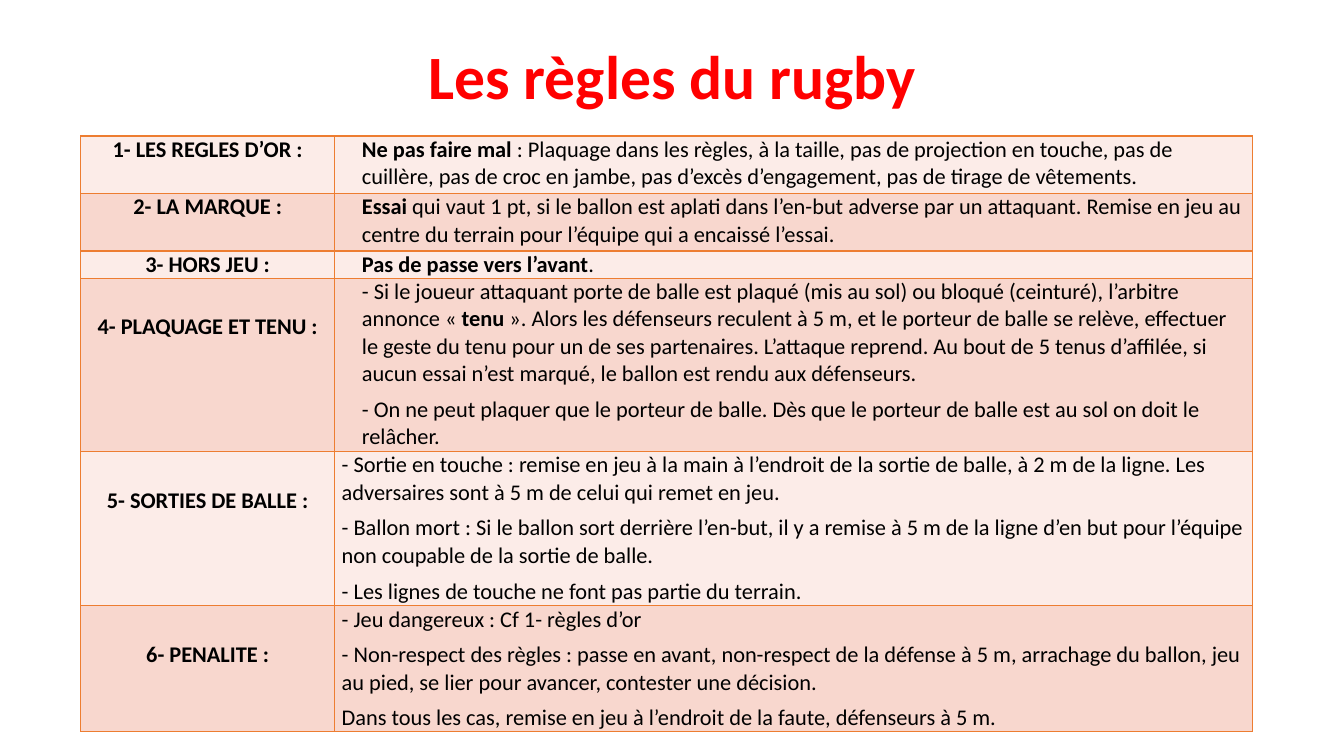
from dataclasses import dataclass

from lxml import etree
from pptx import Presentation
from pptx import util as u
from pptx.dml.color import RGBColor
from pptx.enum import text
from pptx.oxml import ns


@dataclass(frozen=True)
class Theme:
    font: str = "Calibri"
    title_size: int = 44
    body_size: int = 16
    paragraph_gap: int = 6
    border_width: int = 1
    title: str = "FF0000"
    ink: str = "000000"
    border: str = "ED7D31"
    bands: tuple[str, str] = ("FCECE8", "F8D7CE")


@dataclass(frozen=True)
class Span:
    content: str
    bold: bool = False


@dataclass(frozen=True)
class Rule:
    label: str
    height: float
    paragraphs: list[list[Span]]
    label_top: float = 0
    indent: float = 0


THEME = Theme()
COLUMN_WIDTHS = (2.52, 9.1)
SIDE_MARGIN = 0.07
INDENT = 0.2
LABEL_DROP = 0.35

RULES = [
    Rule("1- LES REGLES D’OR :", 0.57, [[
        Span("Ne pas faire mal", True),
        Span(" : Plaquage dans les règles, à la taille, pas de projection en touche, "
             "pas de cuillère, pas de croc en jambe, pas d’excès d’engagement, "
             "pas de tirage de vêtements."),
    ]], indent=INDENT),
    Rule("2- LA MARQUE :", 0.57, [[
        Span("Essai", True),
        Span(" qui vaut 1 pt, si le ballon est aplati dans l’en-but adverse par un "
             "attaquant. Remise en jeu au centre du terrain pour l’équipe qui a "
             "encaissé l’essai."),
    ]], indent=INDENT),
    Rule("3- HORS JEU :", 0.27, [[
        Span("Pas de passe vers l’avant", True),
        Span("."),
    ]], indent=INDENT),
    Rule("4- PLAQUAGE ET TENU :", 1.72, [
        [
            Span("- Si le joueur attaquant porte de balle est plaqué (mis au sol) ou "
                 "bloqué (ceinturé), l’arbitre annonce « "),
            Span("tenu", True),
            Span(" ». Alors les défenseurs reculent à 5 m, et le porteur de balle se "
                 "relève, effectuer le geste du tenu pour un de ses partenaires. "
                 "L’attaque reprend. Au bout de 5 tenus d’affilée, si aucun essai "
                 "n’est marqué, le ballon est rendu aux défenseurs."),
        ],
        [Span("- On ne peut plaquer que le porteur de balle. Dès que le porteur de "
              "balle est au sol on doit le relâcher.")],
    ], LABEL_DROP, INDENT),
    Rule("5- SORTIES DE BALLE :", 1.53, [
        [Span("- Sortie en touche : remise en jeu à la main à l’endroit de la sortie de "
              "balle, à 2 m de la ligne. Les adversaires sont à 5 m de celui qui "
              "remet en jeu.")],
        [Span("- Ballon mort : Si le ballon sort derrière l’en-but, il y a remise à 5 m "
              "de la ligne d’en but pour l’équipe non coupable de la sortie de balle.")],
        [Span("- Les lignes de touche ne font pas partie du terrain.")],
    ], LABEL_DROP),
    Rule("6- PENALITE :", 1.25, [
        [Span("- Jeu dangereux : Cf 1- règles d’or")],
        [Span("- Non-respect des règles : passe en avant, non-respect de la défense à "
              "5 m, arrachage du ballon, jeu au pied, se lier pour avancer, contester "
              "une décision.")],
        [Span("Dans tous les cas, remise en jeu à l’endroit de la faute, défenseurs "
              "à 5 m.")],
    ], LABEL_DROP),
]


def style_font(font, size: int, color: str, bold: bool) -> None:
    font.name = THEME.font
    font.size = u.Pt(size)
    font.bold = bold
    font.color.rgb = RGBColor.from_string(color)


def add_title(page, content: str) -> None:
    box = page.shapes.add_textbox(
        u.Inches(0.92), u.Inches(0.4), u.Inches(11.5), u.Inches(0.78))
    frame = box.text_frame
    frame.word_wrap = True
    frame.vertical_anchor = text.MSO_ANCHOR.MIDDLE
    frame.text = content
    para = frame.paragraphs[0]
    para.alignment = text.PP_ALIGN.CENTER
    para.line_spacing = 0.9
    style_font(para.runs[0].font, THEME.title_size, THEME.title, True)


def add_borders(cell) -> None:
    properties = cell._tc.get_or_add_tcPr()
    for side in ("lnL", "lnR", "lnT", "lnB"):
        line = etree.SubElement(
            properties, ns.qn(f"a:{side}"), w=str(u.Pt(THEME.border_width)))
        fill = etree.SubElement(line, ns.qn("a:solidFill"))
        etree.SubElement(fill, ns.qn("a:srgbClr"), val=THEME.border)


def fill_cell(cell, paragraphs: list[list[Span]], band: str, centred: bool = False,
              top: float = 0, indent: float = 0) -> None:
    add_borders(cell)
    cell.fill.solid()
    cell.fill.fore_color.rgb = RGBColor.from_string(band)
    cell.margin_left = u.Inches(SIDE_MARGIN + indent)
    cell.margin_right = u.Inches(SIDE_MARGIN)
    cell.margin_top = u.Inches(top)
    cell.margin_bottom = 0
    frame = cell.text_frame
    for index, spans in enumerate(paragraphs):
        para = frame.add_paragraph() if index else frame.paragraphs[0]
        para.alignment = text.PP_ALIGN.CENTER if centred else text.PP_ALIGN.LEFT
        para.space_before = u.Pt(THEME.paragraph_gap)
        for span in spans:
            run = para.add_run()
            run.text = span.content
            style_font(run.font, THEME.body_size, THEME.ink, span.bold)


def add_rules(page, rules: list[Rule]) -> None:
    table = page.shapes.add_table(
        len(rules), len(COLUMN_WIDTHS), u.Inches(0.8), u.Inches(1.35),
        u.Inches(sum(COLUMN_WIDTHS)),
        u.Inches(sum(rule.height for rule in rules))).table
    table.first_row = False
    table.horz_banding = False
    for column, width in zip(table.columns, COLUMN_WIDTHS):
        column.width = u.Inches(width)
    for index, (row, rule) in enumerate(zip(table.rows, rules)):
        row.height = u.Inches(rule.height)
        band = THEME.bands[index % len(THEME.bands)]
        label_cell, text_cell = row.cells
        fill_cell(label_cell, [[Span(rule.label, True)]], band,
                  centred=True, top=rule.label_top)
        fill_cell(text_cell, rule.paragraphs, band, indent=rule.indent)


def main() -> None:
    deck = Presentation()
    deck.slide_width = u.Inches(13.33)
    deck.slide_height = u.Inches(7.5)
    page = deck.slides.add_slide(deck.slide_layouts[6])
    add_title(page, "Les règles du rugby")
    add_rules(page, RULES)
    deck.save("out.pptx")


if __name__ == "__main__":
    main()
